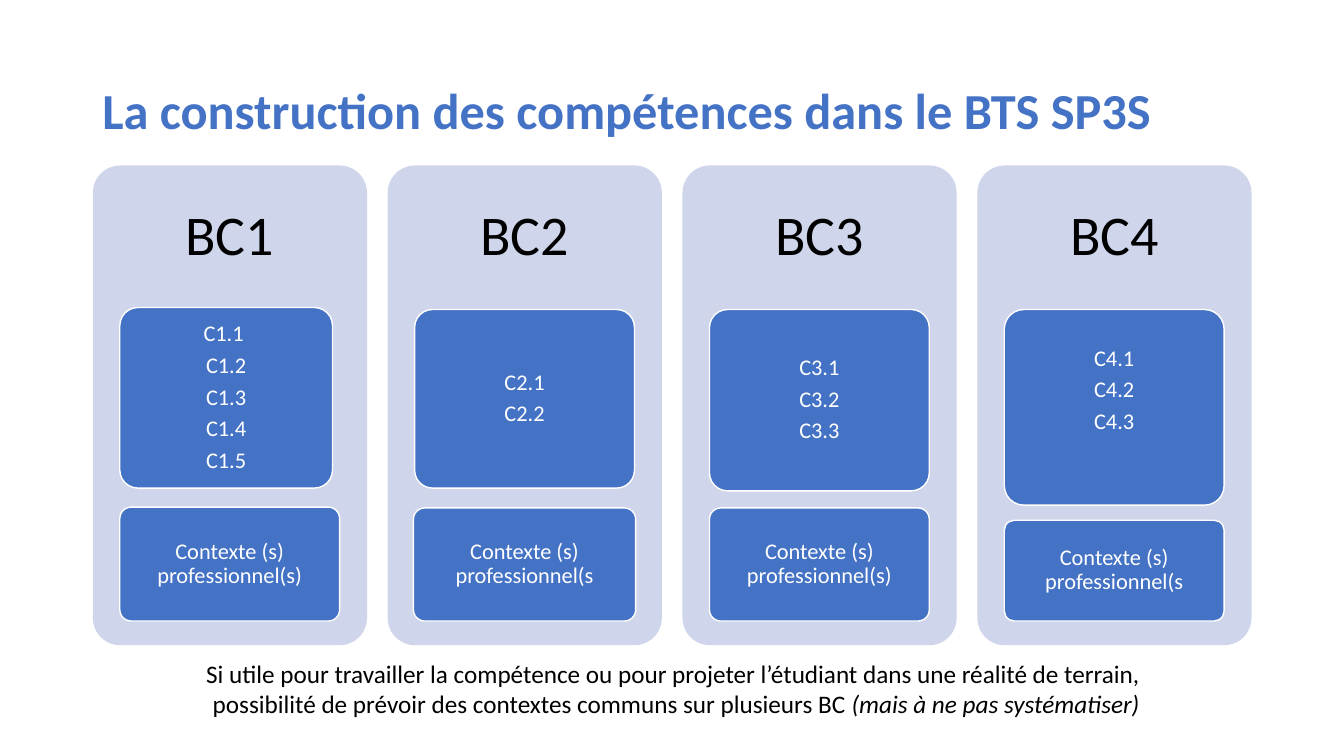
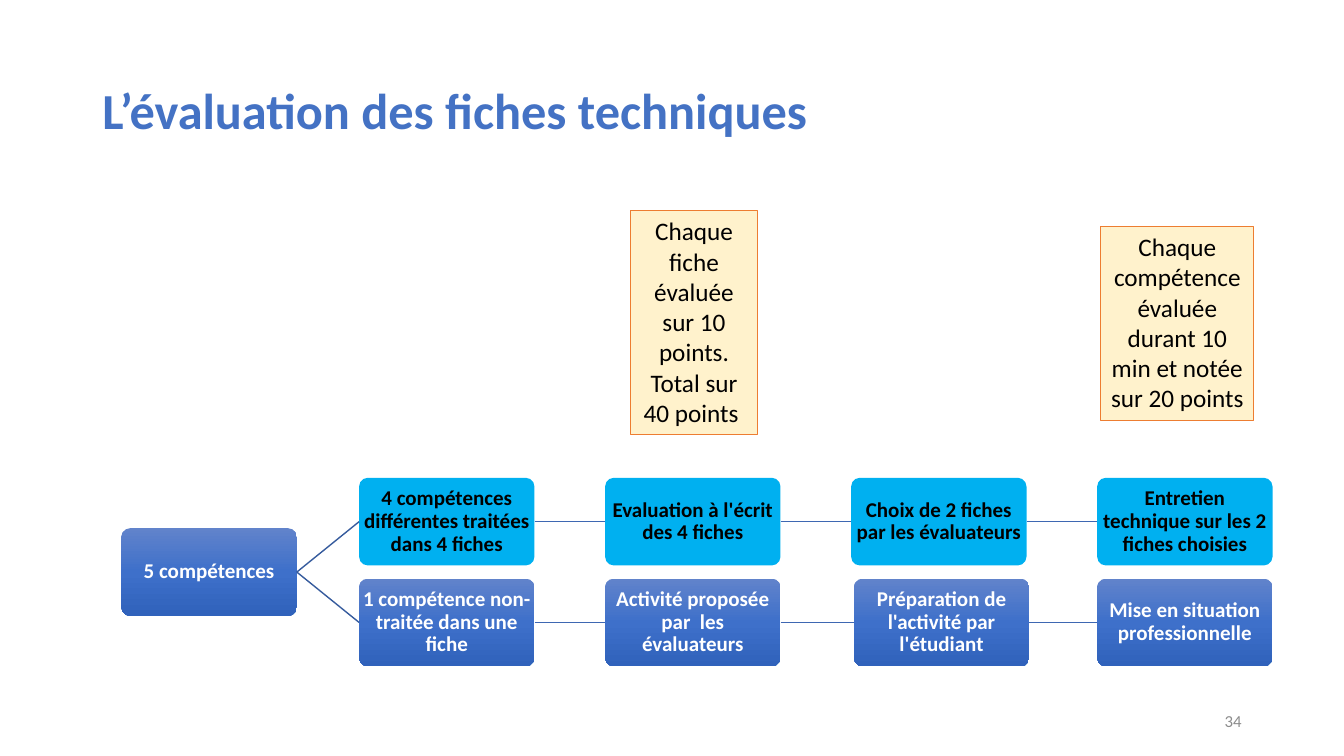
"""Build two slides on competences and assessment in the BTS SP3S."""
import copy

import lxml.etree
import pptx
import pptx.dml.color
import pptx.enum.shapes
import pptx.enum.text
import pptx.oxml.ns
import pptx.util

Cm = pptx.util.Cm
Pt = pptx.util.Pt
ALIGN = pptx.enum.text.PP_ALIGN
ANCHOR = pptx.enum.text.MSO_ANCHOR
SHAPE = pptx.enum.shapes.MSO_SHAPE
COLORS = {
    name: pptx.dml.color.RGBColor.from_string(value)
    for name, value in {
        "blue": "4472C4", "panel": "CFD5EA", "white": "FFFFFF", "black": "000000",
        "cyan": "00B0F0", "cream": "FFF2CC", "orange": "ED7D31", "grey": "8C8C8C",
        "branch": "365B9D", "link": "3E67B2",
        "light": "6183CB", "middle": "3E70CA", "dark": "3062BB",
    }.items()
}
GRADIENT = [(0, "light"), (0.5, "middle"), (1, "dark")]


def write(shape, lines, size, color, bold=False, align=ALIGN.CENTER,
          anchor=ANCHOR.MIDDLE, inset=None, spacing=None, after=0):
    frame = shape.text_frame
    frame.word_wrap = True
    frame.vertical_anchor = anchor
    if inset is not None:
        frame.margin_left = frame.margin_right = Cm(inset)
        frame.margin_top = frame.margin_bottom = Cm(inset)
    frame.text = "\n".join(lines)
    for paragraph in frame.paragraphs:
        paragraph.alignment = align
        paragraph.line_spacing = spacing
        paragraph.space_after = Pt(after)
        paragraph.font.name = "Calibri"
        paragraph.font.size = Pt(size)
        paragraph.font.bold = bold
        paragraph.font.color.rgb = COLORS[color]
    return frame


def add_box(slide, left, top, width, height, fill, line=None, weight=1,
            kind=SHAPE.ROUNDED_RECTANGLE):
    shape = slide.shapes.add_shape(kind, Cm(left), Cm(top), Cm(width), Cm(height))
    shape.shadow.inherit = False
    if kind == SHAPE.ROUNDED_RECTANGLE:
        shape.adjustments[0] = 0.1
    if fill == "gradient":
        shape.fill.gradient()
        shape.fill.gradient_angle = 270
        stop_list = shape._element.spPr.find(".//" + pptx.oxml.ns.qn("a:gsLst"))
        stop_list.append(copy.deepcopy(stop_list[-1]))
        for stop, (position, name) in zip(shape.fill.gradient_stops, GRADIENT):
            stop.position = position
            stop.color.rgb = COLORS[name]
    else:
        shape.fill.solid()
        shape.fill.fore_color.rgb = COLORS[fill]
    if line:
        shape.line.color.rgb = COLORS[line]
        shape.line.width = Pt(weight)
    else:
        shape.line.fill.background()
    return shape


presentation = pptx.Presentation()
presentation.slide_width = Cm(33.87)
presentation.slide_height = Cm(19.05)

slides = []
for title in ["La construction des compétences dans le BTS SP3S",
              "L’évaluation des fiches techniques"]:
    slide = presentation.slides.add_slide(presentation.slide_layouts[6])
    title_box = slide.shapes.add_textbox(Cm(2.33), Cm(1.01), Cm(29.21), Cm(3.68))
    write(title_box, [title], 36, "blue", bold=True, align=ALIGN.LEFT, spacing=0.9)
    slides.append(slide)
blocks_slide, assessment_slide = slides

CONTEXT = "Contexte (s) professionnel(s"
CONTEXT_BOTTOM = 15.65
blocks = [
    ("BC1", ["C1.1 ", "C1.2", "C1.3", "C1.4", "C1.5"],
     (0.68, 7.75, 5.36, 4.55), (0.68, 12.78, 5.54), CONTEXT + ")"),
    ("BC2", ["C2.1", "C2.2"],
     (0.68, 7.8, 5.54, 4.5), (0.65, 12.8, 5.6), CONTEXT),
    ("BC3", ["C3.1", "C3.2", "C3.3"],
     (0.68, 7.8, 5.54, 4.57), (0.68, 12.8, 5.54), CONTEXT + ")"),
    ("BC4", ["C4.1", "C4.2", "C4.3"],
     (0.68, 7.8, 5.54, 4.93), (0.68, 13.11, 5.54), CONTEXT),
]
for index, (name, skills, skill_place, context_place, context) in enumerate(blocks):
    left = 2.34 + index * 7.43
    panel = add_box(blocks_slide, left, 4.17, 6.91, 12.09, "panel")
    write(panel, [name], 40, "black", anchor=ANCHOR.TOP, inset=0.85, spacing=0.9)

    offset, top, width, height = skill_place
    skill_box = add_box(blocks_slide, left + offset, top, width, height, "blue", "white")
    frame = write(skill_box, skills, 16, "white", inset=0.1, spacing=0.9, after=5.3)
    if name == "BC4":
        frame.margin_bottom = Cm(0.95)

    offset, top, width = context_place
    context_box = add_box(blocks_slide, left + offset, top, width,
                          CONTEXT_BOTTOM - top, "blue", "white")
    write(context_box, [context], 16, "white", inset=0.1, spacing=0.9)

advice_box = blocks_slide.shapes.add_textbox(Cm(3.02), Cm(16.46), Cm(28.04), Cm(1.8))
frame = write(advice_box, [
    "Si utile pour travailler la compétence ou pour projeter l’étudiant dans une réalité de terrain, ",
    "possibilité de prévoir des contextes communs sur plusieurs BC ",
], 18, "black", anchor=ANCHOR.TOP)
remark = frame.paragraphs[1].add_run()
remark.text = "(mais à ne pas systématiser)"
remark.font.italic = True

STEP_WIDTH, STEP_HEIGHT = 4.42, 2.21
root_box = add_box(assessment_slide, 3.06, 13.31, STEP_WIDTH, STEP_HEIGHT, "gradient")
write(root_box, ["5 compétences"], 15, "white", bold=True, inset=0.03, spacing=0.9)

step_rows = [
    (12.04, "cyan", "black", [9.05, 15.25, 21.45, 27.65],
     ["4 compétences différentes traitées dans 4 fiches",
      "Evaluation à l'écrit des 4 fiches",
      "Choix de 2 fiches par les évaluateurs",
      "Entretien technique sur les 2 fiches choisies"]),
    (14.58, "gradient", "white", [9.05, 15.25, 21.52, 27.65],
     ["1 compétence non-traitée dans une fiche",
      "Activité proposée par  les évaluateurs",
      "Préparation de l'activité par l'étudiant",
      "Mise en situation professionnelle"]),
]
for top, fill, color, lefts, labels in step_rows:
    previous = root_box
    for left, label in zip(lefts, labels):
        step_box = add_box(assessment_slide, left, top, STEP_WIDTH, STEP_HEIGHT, fill)
        write(step_box, [label], 15, color, bold=True, inset=0.03, spacing=0.9)
        connector = assessment_slide.shapes.add_connector(
            pptx.enum.shapes.MSO_CONNECTOR.STRAIGHT, 0, 0, 0, 0)
        connector.begin_connect(previous, 3)
        connector.end_connect(step_box, 1)
        connector.line.color.rgb = COLORS["branch" if previous is root_box else "link"]
        connector.line.width = Pt(1)
        lxml.etree.SubElement(connector._element.spPr, pptx.oxml.ns.qn("a:effectLst"))
        previous = step_box

for left, top, width, height, note in [
    (15.9, 5.31, 3.18, 5.64, "Chaque fiche évaluée sur 10 points. Total sur 40 points "),
    (27.74, 5.71, 3.86, 4.88,
     "Chaque compétence évaluée durant 10 min et notée sur 20 points"),
]:
    note_box = add_box(assessment_slide, left, top, width, height, "cream", "orange",
                       weight=0.75, kind=SHAPE.RECTANGLE)
    write(note_box, [note], 18, "black", anchor=ANCHOR.TOP)

number_box = assessment_slide.shapes.add_textbox(Cm(23.92), Cm(17.66), Cm(7.62), Cm(1.01))
write(number_box, ["34"], 12, "grey", align=ALIGN.RIGHT)

presentation.save("out.pptx")
